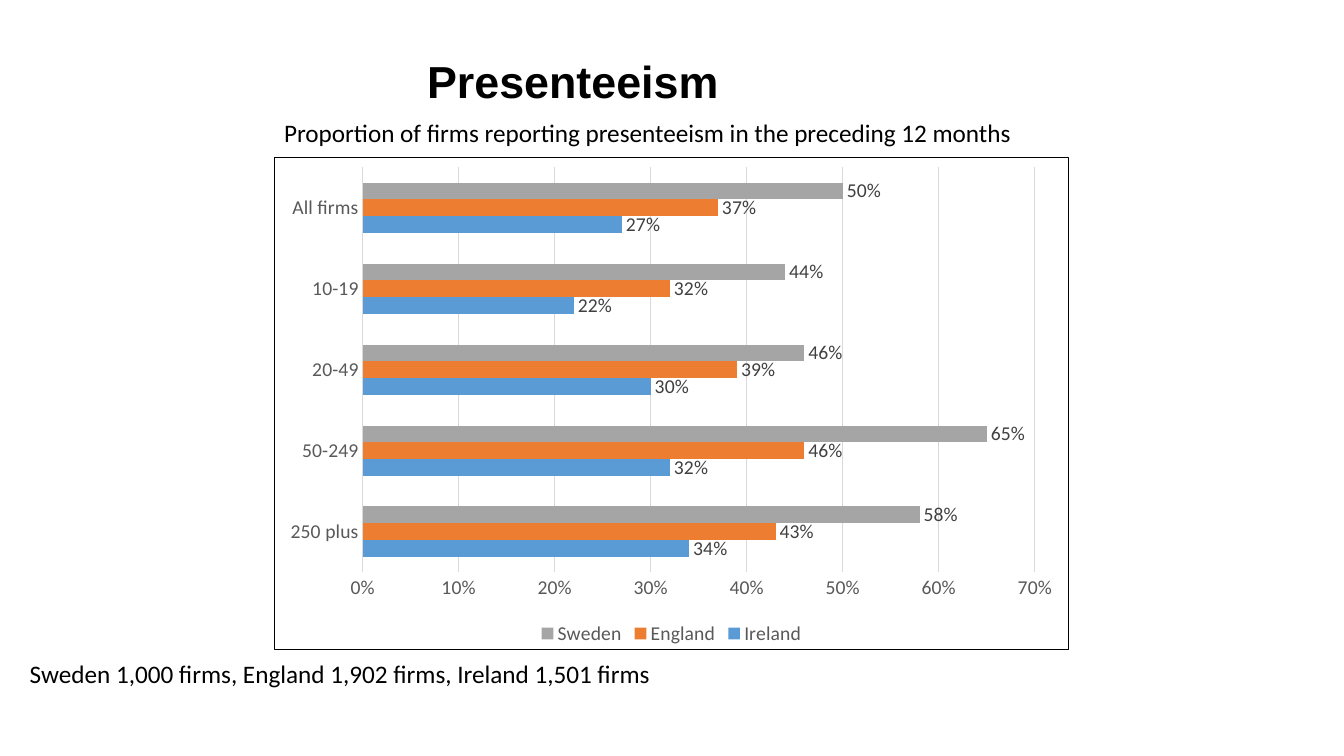
from dataclasses import dataclass

from lxml.etree import fromstring
from pptx import Presentation
from pptx.chart.data import CategoryChartData
from pptx.dml.color import RGBColor
from pptx.enum.chart import XL_CHART_TYPE, XL_LABEL_POSITION, XL_LEGEND_POSITION, XL_TICK_MARK
from pptx.enum.text import PP_ALIGN
from pptx.oxml.ns import nsdecls
from pptx.util import Cm, Pt


@dataclass(frozen=True)
class Theme:
    """Hold the colours, fonts and type sizes of the slide."""

    ink: str = "000000"
    axis_text: str = "595959"
    label_text: str = "404040"
    grid: str = "D9D9D9"
    heading_font: str = "Arial"
    body_font: str = "Calibri"
    title_size: int = 32
    body_size: int = 18
    chart_size: int = 14
    hairline: float = 0.75


THEME = Theme()
FIRM_SIZES = ["250 plus", "50-249", "20-49", "10-19", "All firms"]
COUNTRIES = {
    "Ireland": ("5B9BD5", [0.34, 0.32, 0.30, 0.22, 0.27]),
    "England": ("ED7D31", [0.43, 0.46, 0.39, 0.32, 0.37]),
    "Sweden": ("A5A5A5", [0.58, 0.65, 0.46, 0.44, 0.50]),
}


def style_font(font, size, color, name=THEME.body_font, bold=False):
    """Set the face, size, weight and colour of a font."""
    font.name = name
    font.size = Pt(size)
    font.bold = bold
    font.color.rgb = RGBColor.from_string(color)


def style_line(line):
    """Draw a line as a pale hairline."""
    line.color.rgb = RGBColor.from_string(THEME.grid)
    line.width = Pt(THEME.hairline)


def add_text(slide, text, box, size=THEME.body_size, name=THEME.body_font,
             bold=False, align=PP_ALIGN.LEFT):
    """Add a one-paragraph text box with its position given in centimetres."""
    text_frame = slide.shapes.add_textbox(*map(Cm, box)).text_frame
    text_frame.word_wrap = True
    text_frame.text = text
    paragraph = text_frame.paragraphs[0]
    paragraph.alignment = align
    style_font(paragraph.runs[0].font, size, THEME.ink, name, bold)


def add_border(chart):
    """Frame the chart area with a thin line."""
    border = fromstring(
        f'<c:spPr {nsdecls("c", "a")}><a:noFill/><a:ln w="{Pt(THEME.hairline)}">'
        f'<a:solidFill><a:srgbClr val="{THEME.ink}"/></a:solidFill></a:ln></c:spPr>'
    )
    chart.element.find("c:chart", chart.element.nsmap).addnext(border)


def style_axes(chart):
    """Format the firm-size axis and the percentage axis."""
    for axis in (chart.category_axis, chart.value_axis):
        axis.major_tick_mark = axis.minor_tick_mark = XL_TICK_MARK.NONE
        style_font(axis.tick_labels.font, THEME.chart_size, THEME.axis_text)
    chart.category_axis.has_major_gridlines = False
    style_line(chart.category_axis.format.line)
    percentages = chart.value_axis
    percentages.minimum_scale, percentages.maximum_scale = 0, 0.7
    percentages.major_unit = 0.1
    percentages.tick_labels.number_format = "0%"
    percentages.tick_labels.number_format_is_linked = False
    percentages.format.line.fill.background()
    style_line(percentages.major_gridlines.format.line)


def style_series(series, color):
    """Colour the bars of one country and label them."""
    series.format.fill.solid()
    series.format.fill.fore_color.rgb = RGBColor.from_string(color)
    labels = series.data_labels
    labels.show_value = True
    labels.position = XL_LABEL_POSITION.OUTSIDE_END
    labels.number_format = "0%"
    labels.number_format_is_linked = False
    style_font(labels.font, THEME.chart_size, THEME.label_text)


def add_bar_chart(slide, box):
    """Add the clustered bar chart of presenteeism by firm size."""
    data = CategoryChartData(number_format="0%")
    data.categories = FIRM_SIZES
    for country, (_, shares) in COUNTRIES.items():
        data.add_series(country, shares)
    chart = slide.shapes.add_chart(XL_CHART_TYPE.BAR_CLUSTERED, *map(Cm, box), data).chart
    chart.has_title = False
    style_font(chart.font, THEME.chart_size, THEME.ink)
    chart.has_legend = True
    chart.legend.position = XL_LEGEND_POSITION.BOTTOM
    chart.legend.include_in_layout = False
    style_font(chart.legend.font, THEME.chart_size, THEME.axis_text)
    style_axes(chart)
    plot = chart.plots[0]
    plot.gap_width = 182
    plot.vary_by_categories = False
    for series in plot.series:
        style_series(series, COUNTRIES[series.name][0])
    add_border(chart)


def main():
    """Build the slide and save it."""
    presentation = Presentation()
    presentation.slide_width, presentation.slide_height = Cm(33.87), Cm(19.05)
    slide = presentation.slides.add_slide(presentation.slide_layouts[6])
    add_text(slide, "Presenteeism", (1.78, 1.24, 25.32, 1.63), THEME.title_size,
             THEME.heading_font, True, PP_ALIGN.CENTER)
    add_bar_chart(slide, (6.91, 3.96, 20.02, 12.42))
    add_text(slide, "Proportion of firms reporting presenteeism in the preceding 12 months",
             (6.91, 2.82, 20, 1.02))
    add_text(slide, "Sweden 1,000 firms, England 1,902 firms, Ireland 1,501 firms",
             (0.5, 16.46, 17.5, 1.02))
    presentation.save("out.pptx")


if __name__ == "__main__":
    main()
